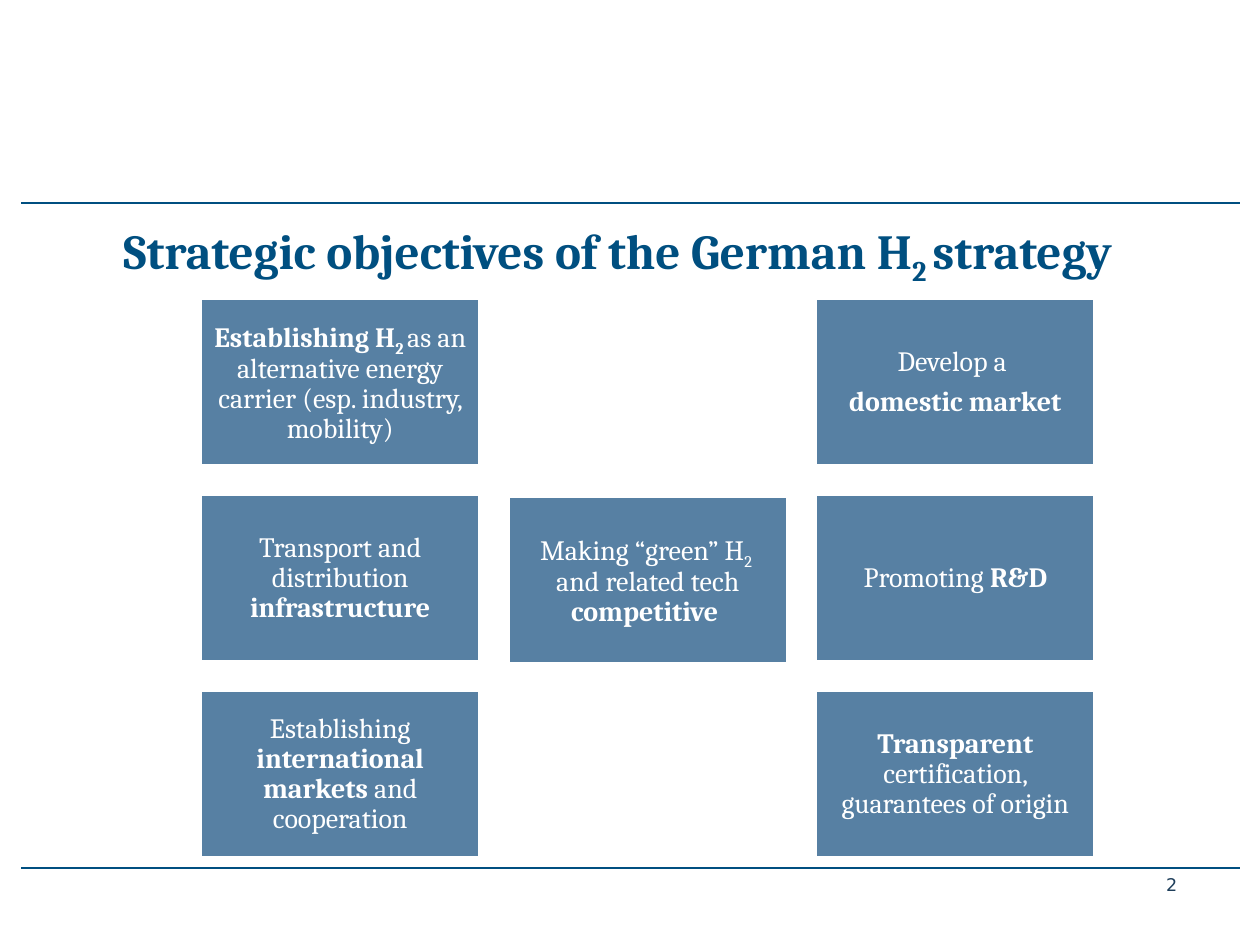
"""Build the slide on the strategic objectives of the German hydrogen strategy."""
from dataclasses import dataclass

from lxml.etree import SubElement as Sub
from pptx import Presentation as Deck
from pptx.dml.color import RGBColor as Rgb
from pptx.enum.shapes import MSO_CONNECTOR as Link, MSO_SHAPE as Kind
from pptx.enum.text import MSO_ANCHOR as Anchor, PP_ALIGN as Align
from pptx.oxml.ns import qn
from pptx.util import Cm, Pt


@dataclass(frozen=True)
class Theme:
    navy: Rgb = Rgb.from_string("004F80")
    ink: Rgb = Rgb.from_string("1E3E5A")
    steel: Rgb = Rgb.from_string("5780A3")
    white: Rgb = Rgb.from_string("FFFFFF")
    serif: str = "Cambria"
    sans: str = "DejaVu Sans"
    head: Pt = Pt(28)
    body: Pt = Pt(16)
    small: Pt = Pt(10)


THEME = Theme()
BOLD, SUB = "b", "s"
LEFT, TOP = 4.04, 6.02
STEP_X, STEP_Y = 6.2, 3.95
WIDE, HIGH = 5.64, 3.38
CARDS = [
    (0, 0, [[("Establishing H", BOLD), ("2 ", BOLD + SUB),
             ("as an alternative energy carrier (esp. industry, mobility)", "")]]),
    (1, 1.01, [[("Making “green” H", ""), ("2 ", SUB),
                (" and related tech ", ""), ("competitive ", BOLD)]]),
    (2, 0, [[("Develop a ", "")], [("domestic market", BOLD)]]),
    (0, 1, [[("Transport and distribution ", ""), ("infrastructure", BOLD)]]),
    (2, 2, [[("Transparent", BOLD), (" certification, guarantees of origin", "")]]),
    (2, 1, [[("Promoting ", ""), ("R&D", BOLD)]]),
    (0, 2, [[("Establishing ", ""), ("international markets ", BOLD),
             ("and cooperation", "")]]),
]
TITLE = [[("Strategic objectives of the German H", BOLD),
          ("2 ", BOLD + SUB), ("strategy", BOLD)]]


def apply(item, form):
    for key, value in form.items():
        setattr(item, key, value)


def write(frame, paras, color, font, para, box):
    apply(frame, {"word_wrap": True, **box})
    for i, runs in enumerate(paras):
        line = frame.add_paragraph() if i else frame.paragraphs[0]
        apply(line, para)
        for text, style in runs:
            run = line.add_run()
            run.text = text
            apply(run.font, {**font, "bold": BOLD in style})
            run.font.color.rgb = color
            if SUB in style:
                run.font._element.set("baseline", "-25000")


def rule(slide, y):
    line = slide.shapes.add_connector(Link.STRAIGHT, Cm(0.43), Cm(y), Cm(25), Cm(y))
    line.line.color.rgb = THEME.navy
    line.line.width = Pt(1)
    Sub(line._element.spPr, qn("a:effectLst"))


def label(slide, place, paras, color, font, para, box):
    shape = slide.shapes.add_textbox(*map(Cm, place))
    write(shape.text_frame, paras, color, font, para, box)


def card(slide, col, row, paras):
    shape = slide.shapes.add_shape(
        Kind.RECTANGLE, Cm(LEFT + col * STEP_X), Cm(TOP + row * STEP_Y),
        Cm(WIDE), Cm(HIGH))
    shape.shadow.inherit = False
    shape.fill.solid()
    shape.fill.fore_color.rgb = THEME.steel
    shape.line.color.rgb = THEME.white
    shape.line.width = Pt(2)
    sides = ("left", "top", "right", "bottom")
    box = {f"margin_{side}": Cm(0.18) for side in sides}
    write(shape.text_frame, paras, THEME.white,
          {"name": THEME.serif, "size": THEME.body},
          {"alignment": Align.CENTER, "line_spacing": 0.9, "space_after": Pt(5.6)},
          {"vertical_anchor": Anchor.MIDDLE, **box})


def main():
    deck = Deck()
    apply(deck, {"slide_width": Cm(25.4), "slide_height": Cm(19.05)})
    slide = deck.slides.add_slide(deck.slide_layouts[6])
    for y in (4.09, 17.5):
        rule(slide, y)
    label(slide, (2.49, 4.34, 22.07, 0.99), TITLE, THEME.navy,
          {"name": THEME.serif, "size": THEME.head}, {"alignment": Align.LEFT},
          {"margin_left": 0, "margin_top": Cm(0.1), "margin_right": Cm(0.1),
           "margin_bottom": Cm(0.1)})
    label(slide, (20.98, 17.5, 3, 0.99), [[("2", "")]], THEME.ink,
          {"name": THEME.sans, "size": THEME.small}, {"alignment": Align.RIGHT}, {})
    for col, row, paras in CARDS:
        card(slide, col, row, paras)
    deck.save("out.pptx")


if __name__ == "__main__":
    main()
